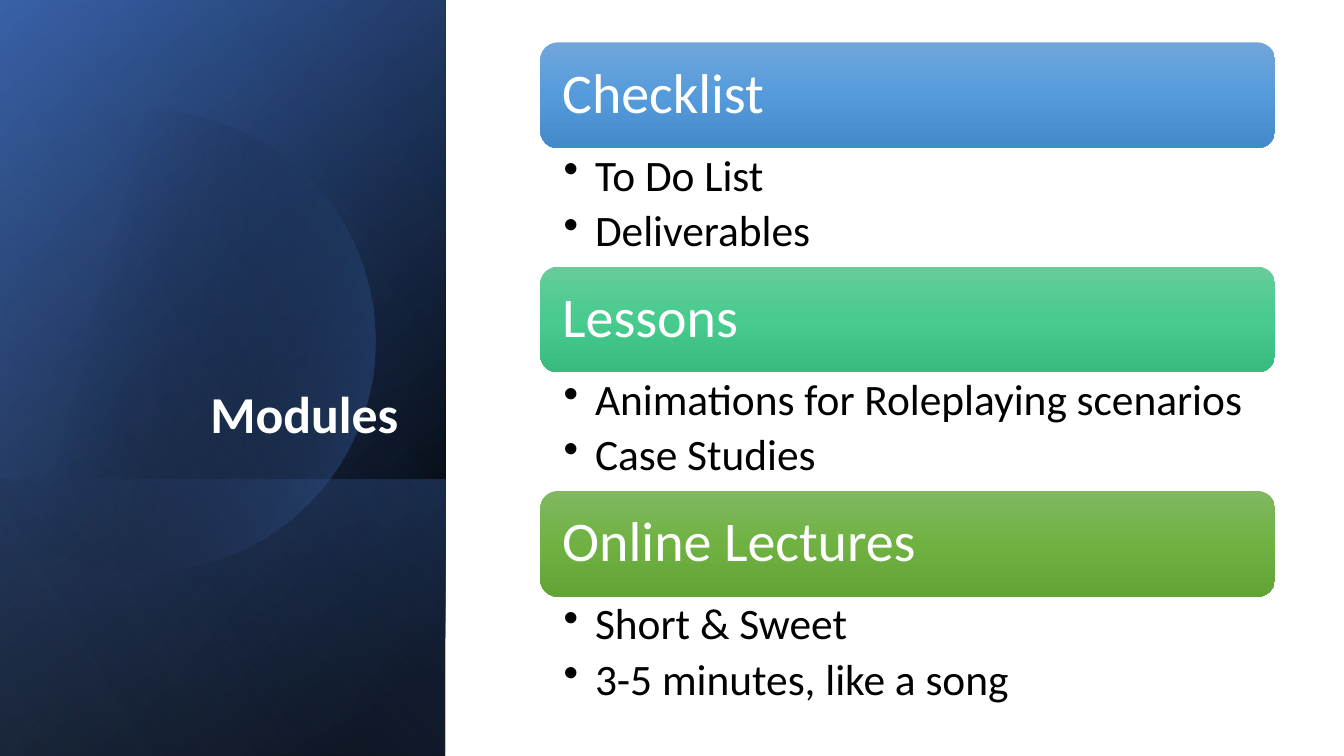
from dataclasses import dataclass
from typing import Optional

from lxml.etree import SubElement
from pptx import Presentation
from pptx.dml.color import RGBColor as RGB
from pptx.enum.shapes import MSO_SHAPE as SHAPE
from pptx.enum.text import MSO_ANCHOR as ANCHOR, PP_ALIGN as ALIGN
from pptx.oxml.ns import qn
from pptx.util import Pt

COLORS = {
    "white": "FFFFFF", "black": "000000", "navy": "2F5597",
    "blue": "4472C4", "pale": "8FAADC",
    "sky_top": "71A6DB", "sky_mid": "559BDB", "sky_end": "448ACA",
    "mint_top": "67CC9A", "mint_mid": "47CB8E", "mint_end": "39BB7F",
    "leaf_top": "81B861", "leaf_mid": "6FB242", "leaf_end": "62A336",
}
FONT = "Calibri"
PANEL_W, PANEL_H = 318.24, 540
LEFT, TOP, WIDTH = 385.92, 30.24, 524.88
BAR_H, LIST_H = 75.6, 84.6


@dataclass
class Stop:
    pos: int
    color: str
    alpha: int = 100


@dataclass
class Layer:
    top: float
    height: float
    angle: int
    stops: list[Stop]


@dataclass
class Module:
    title: str
    items: list[str]
    hue: str


BACK_LAYERS = [
    Layer(0, PANEL_H, 50, [Stop(8, "black"), Stop(100, "navy")]),
    Layer(0, PANEL_H, 30, [Stop(0, "black", 0), Stop(99, "blue", 46)]),
    Layer(342.72, 197.28, 130, [Stop(2, "blue", 29), Stop(100, "black", 30)]),
]
FRONT_LAYER = Layer(0, PANEL_H, 120, [Stop(0, "black", 0), Stop(99, "pale", 11)])
DISC_STOPS = [Stop(29, "black", 0), Stop(100, "blue", 43)]
DISC_START = (0, 115.92)
DISC_CURVES = [
    ((16.56, 102.24), (36, 92.16), (57.6, 85.68)),
    ((74.16, 81.36), (90.72, 79.2), (107.28, 79.2)),
    ((177.12, 80.64), (241.2, 126), (261.36, 198)),
    ((286.56, 285.84), (236.16, 376.56), (149.04, 401.76)),
    ((94.32, 417.6), (38.16, 403.92), (0, 371.5)),
]
MODULES = [
    Module("Checklist", ["To Do List", "Deliverables"], "sky"),
    Module("Lessons", ["Animations for Roleplaying scenarios", "Case Studies"], "mint"),
    Module("Online Lectures", ["Short & Sweet", "3-5 minutes, like a song"], "leaf"),
]


def paint(sp, stops: list[Stop], angle: float) -> None:
    sp.shadow.inherit = False
    sp.line.fill.background()
    sp.fill.gradient()
    sp.fill.gradient_angle = 360 - angle
    stop_list = sp._element.spPr.find(qn("a:gradFill")).find(qn("a:gsLst"))
    for old in list(stop_list):
        stop_list.remove(old)
    for stop in stops:
        gs = SubElement(stop_list, qn("a:gs"), pos=str(stop.pos * 1000))
        clr = SubElement(gs, qn("a:srgbClr"), val=COLORS[stop.color])
        if stop.alpha < 100:
            SubElement(clr, qn("a:alpha"), val=str(stop.alpha * 1000))


def write(sp, lines: list[str], *, size: float, color: str, bold: bool = False,
          align=ALIGN.LEFT, anchor=ANCHOR.TOP,
          insets: tuple[float, float, float, float] = (7.2, 3.6, 7.2, 3.6),
          after: float = 0, bullet: Optional[str] = None, indent: float = 0) -> None:
    tf = sp.text_frame
    tf.word_wrap = True
    tf.vertical_anchor = anchor
    tf.margin_left, tf.margin_top, tf.margin_right, tf.margin_bottom = map(Pt, insets)
    for i, line in enumerate(lines):
        p = tf.add_paragraph() if i else tf.paragraphs[0]
        p.alignment = align
        p.line_spacing = 0.9
        p.space_after = Pt(after)
        if bullet:
            p.level = 1
            pPr = p._p.get_or_add_pPr()
            pPr.set("marL", str(Pt(indent)))
            pPr.set("indent", str(-Pt(indent)))
            SubElement(pPr, qn("a:buChar"), char=bullet)
        r = p.add_run()
        r.text = line
        r.font.name = FONT
        r.font.size = Pt(size)
        r.font.bold = bold
        r.font.color.rgb = RGB.from_string(COLORS[color])


def add_layer(s, layer: Layer) -> None:
    shift = (PANEL_W - layer.height) / 2
    sp = s.shapes.add_shape(SHAPE.RECTANGLE, Pt(shift), Pt(layer.top - shift),
                            Pt(layer.height), Pt(PANEL_W))
    sp.rotation = 90
    sp._element.spPr.find(qn("a:xfrm")).set("flipH", "1")
    paint(sp, layer.stops, layer.angle)


def add_disc(s, steps: int = 24) -> None:
    points, start = [], DISC_START
    for c1, c2, end in DISC_CURVES:
        for k in range(1, steps + 1):
            t = k / steps
            u = 1 - t
            points.append(tuple(
                Pt(u**3 * a + 3 * u * u * t * b + 3 * u * t * t * c + t**3 * d)
                for a, b, c, d in zip(start, c1, c2, end)))
        start = end
    builder = s.shapes.build_freeform(*map(Pt, DISC_START))
    builder.add_line_segments(points, close=True)
    paint(builder.convert_to_shape(), DISC_STOPS, 14)


def add_module(s, module: Module, top: float) -> None:
    bar = s.shapes.add_shape(SHAPE.ROUNDED_RECTANGLE, Pt(LEFT), Pt(top),
                             Pt(WIDTH), Pt(BAR_H))
    paint(bar, [Stop(0, f"{module.hue}_top"), Stop(50, f"{module.hue}_mid"),
                Stop(100, f"{module.hue}_end")], 90)
    write(bar, [module.title], size=40, color="white", anchor=ANCHOR.MIDDLE,
          insets=(12, 12, 12, 12))
    box = s.shapes.add_textbox(Pt(LEFT), Pt(top + BAR_H), Pt(WIDTH), Pt(LIST_H))
    write(box, module.items, size=31, color="black", after=6, bullet="•",
          indent=22.5, insets=(16.6, 4, 22.4, 4))


def main() -> None:
    prs = Presentation()
    prs.slide_width, prs.slide_height = Pt(960), Pt(540)
    s = prs.slides.add_slide(prs.slide_layouts[6])
    for layer in BACK_LAYERS:
        add_layer(s, layer)
    add_disc(s)
    add_layer(s, FRONT_LAYER)
    title = s.shapes.add_textbox(Pt(36.72), Pt(132.48), Pt(254.88), Pt(188.64))
    write(title, ["Modules"], size=37, color="white", bold=True,
          align=ALIGN.RIGHT, anchor=ANCHOR.BOTTOM)
    for i, module in enumerate(MODULES):
        add_module(s, module, TOP + i * (BAR_H + LIST_H))
    prs.save("out.pptx")


if __name__ == "__main__":
    main()
